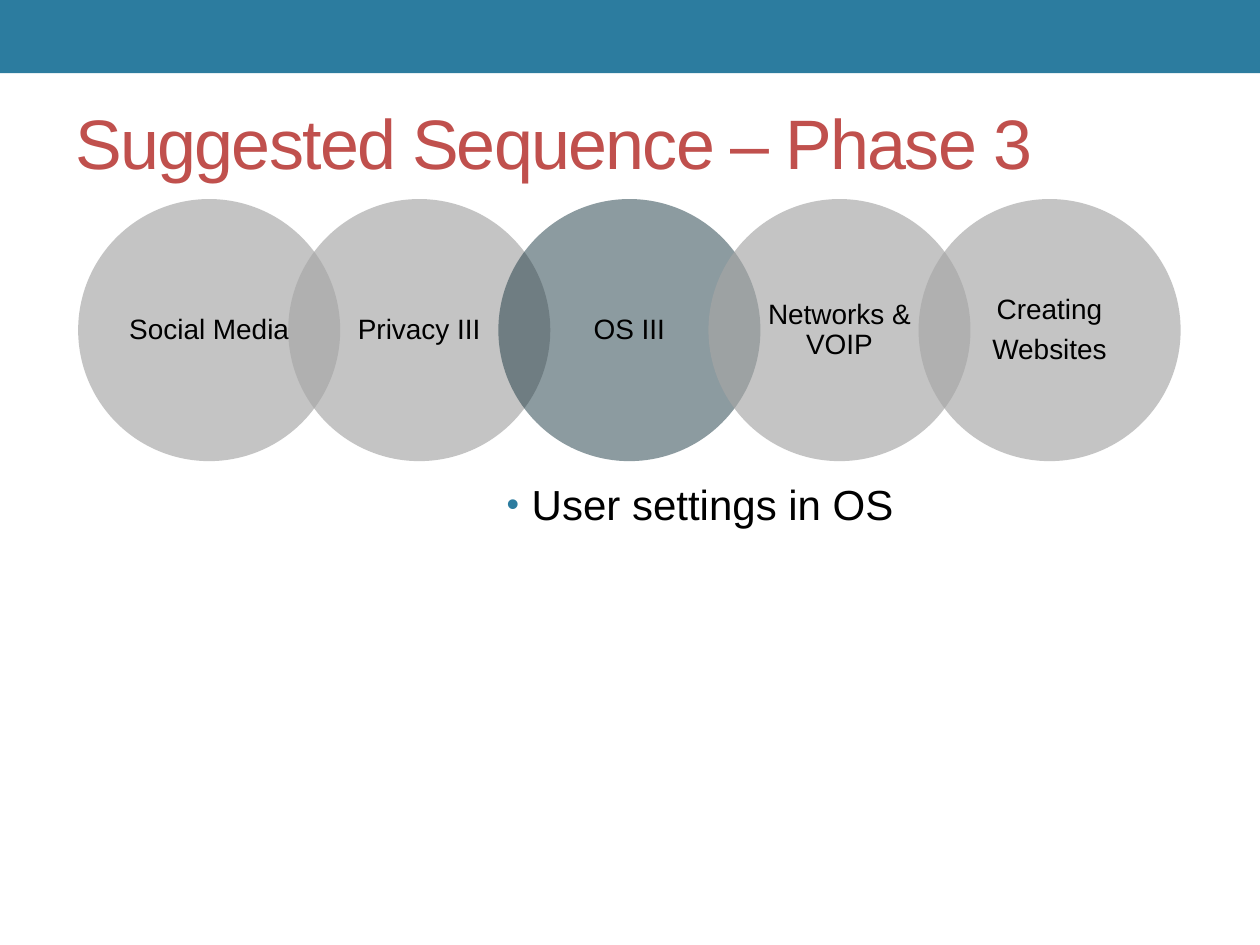
import pptx
import pptx.util
import pptx.dml.color
import pptx.enum.shapes
import pptx.enum.text
import pptx.oxml
import pptx.oxml.ns
from pptx.util import Inches

FONT = "Arial"
BLUE, RED, BLACK = "2C7C9F", "C0504D", "000000"
GREY, SLATE = "A6A6A6", "1B3842"
SHAPE = pptx.enum.shapes.MSO_SHAPE
ALIGN = pptx.enum.text.PP_ALIGN
ANCHOR = pptx.enum.text.MSO_ANCHOR

# Label paragraphs, side inset, fill colour, opacity in percent
STAGES = [
    (["Social Media"], 0, GREY, 66),
    (["Privacy III"], 0, GREY, 66),
    (["OS III"], 0, SLATE, 50),
    (["Networks & VOIP"], 0.11, GREY, 66),
    (["Creating", "Websites"], 0.11, GREY, 66),
]


def rgb(color):
    return pptx.dml.color.RGBColor.from_string(color)


def add_element(parent, tag, **attributes):
    child = pptx.oxml.parse_xml(f"<a:{tag} {pptx.oxml.ns.nsdecls('a')}/>")
    for name, value in attributes.items():
        child.set(name, str(value))
    parent.append(child)
    return child


def add_run(p, text, size, color):
    r = p.add_run()
    r.text = text
    r.font.name = FONT
    r.font.size = pptx.util.Pt(size)
    r.font.color.rgb = rgb(color)
    return r


def place(sp, left, top, width, height):
    sp.left, sp.top = Inches(left), Inches(top)
    sp.width, sp.height = Inches(width), Inches(height)


def add_filled(shapes, kind, left, top, width, height, color):
    sp = shapes.add_shape(kind, Inches(left), Inches(top), Inches(width), Inches(height))
    sp.shadow.inherit = False
    sp.fill.solid()
    sp.fill.fore_color.rgb = rgb(color)
    sp.line.fill.background()
    return sp


def add_title(s, left, top, width, height):
    sp = s.shapes.title
    place(sp, left, top, width, height)
    tf = sp.text_frame
    tf.vertical_anchor = ANCHOR.MIDDLE
    p = tf.paragraphs[0]
    p.alignment = ALIGN.LEFT
    r = add_run(p, "Suggested Sequence – Phase 3", 40, RED)
    r.font._element.set("spc", "-100")


def add_stage(shapes, left, top, size, stage):
    lines, inset, color, opacity = stage
    circle = add_filled(shapes, SHAPE.OVAL, left, top, size, size, color)
    srgb = circle.fill._xPr.find(".//" + pptx.oxml.ns.qn("a:srgbClr"))
    add_element(srgb, "alpha", val=opacity * 1000)

    # Label in the square inscribed in the circle
    side = size / 2 ** 0.5
    margin = (size - side) / 2
    sp = shapes.add_textbox(Inches(left + margin), Inches(top + margin),
                            Inches(side), Inches(side))
    tf = sp.text_frame
    tf.word_wrap = True
    tf.vertical_anchor = ANCHOR.MIDDLE
    tf.margin_left = tf.margin_right = Inches(inset)
    tf.margin_top = tf.margin_bottom = Inches(0.02)
    for i, line in enumerate(lines):
        p = tf.add_paragraph() if i else tf.paragraphs[0]
        p.alignment = ALIGN.CENTER
        p.line_spacing = 0.9
        p.space_after = pptx.util.Pt(5.6)
        add_run(p, line, 16, BLACK)


def add_sequence(s, left, top, width, height):
    group = s.shapes.add_group_shape()
    step = (width - height) / (len(STAGES) - 1)
    for i, stage in enumerate(STAGES):
        add_stage(group.shapes, left + i * step, top, height, stage)


def add_topics(s, left, top, width, height):
    sp = s.placeholders[1]
    place(sp, left, top, width, height)
    p = sp.text_frame.paragraphs[0]
    p.space_before = pptx.util.Pt(4.8)
    pPr = p._p.get_or_add_pPr()
    pPr.set("marL", str(Inches(0.2)))
    pPr.set("indent", str(Inches(-0.2)))
    add_element(add_element(pPr, "buClr"), "srgbClr", val=BLUE)
    add_element(pPr, "buSzPct", val=85000)
    add_element(pPr, "buFont", typeface=FONT)
    add_element(pPr, "buChar", char="•")
    add_run(p, "User settings in OS", 24, BLACK)


def main():
    prs = pptx.Presentation()
    prs.slide_width, prs.slide_height = Inches(10), Inches(7.5)
    s = prs.slides.add_slide(prs.slide_layouts[1])

    # Top band
    add_filled(s.shapes, SHAPE.RECTANGLE, 0, 0, 10, 0.58, BLUE)
    add_title(s, 0.5, 0.58, 9, 1.08)
    # Overlapping circles with the current stage highlighted
    add_sequence(s, 0.62, 1.58, 8.75, 2.08)
    # Topics of the current stage
    add_topics(s, 3.92, 3.75, 4.83, 2.25)

    prs.save("out.pptx")


if __name__ == "__main__":
    main()
